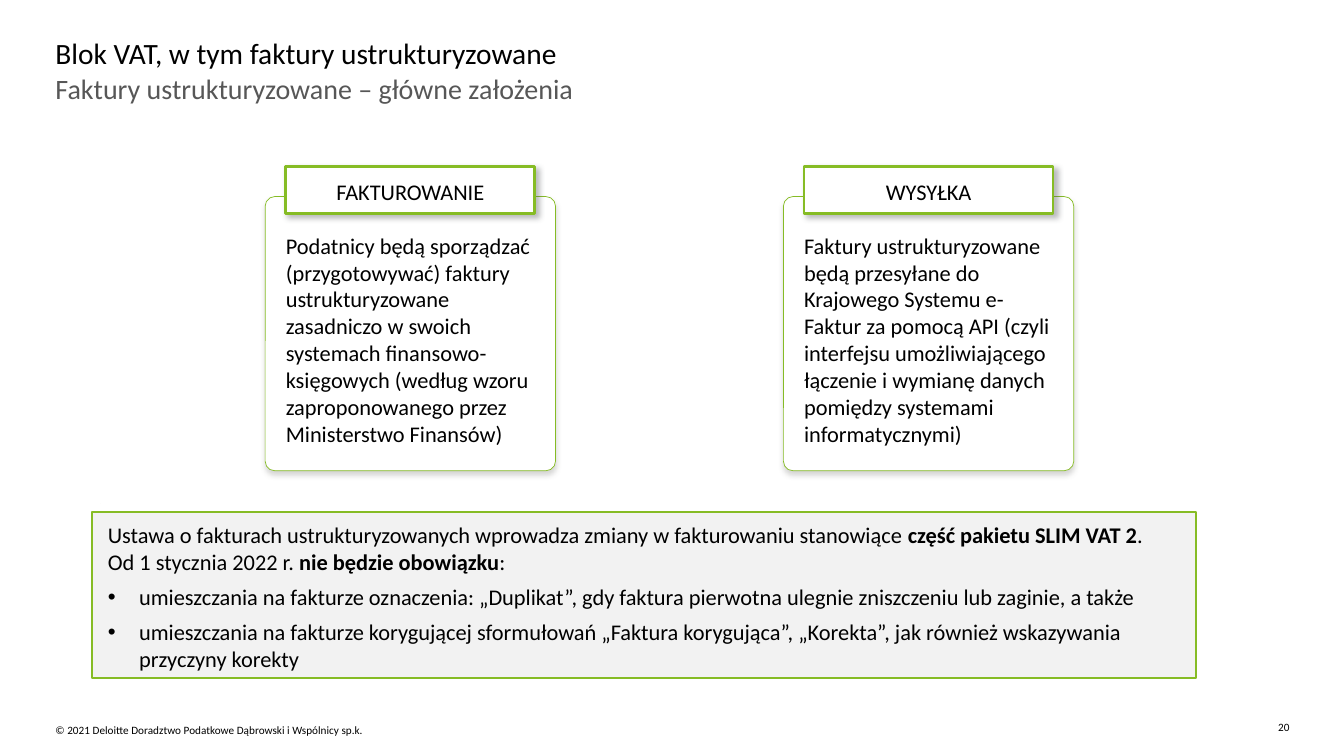
from math import cos, pi, sin

from lxml import etree
from pptx import Presentation
from pptx import util as u
from pptx.dml.color import RGBColor
from pptx.enum import shapes, text
from pptx.oxml.ns import qn

TITLE = "Blok VAT, w tym faktury ustrukturyzowane"
SUBTITLE = "Faktury ustrukturyzowane – główne założenia"
CARDS = [
    (2.63, "FAKTUROWANIE",
     "Podatnicy będą sporządzać (przygotowywać) faktury ustrukturyzowane "
     "zasadniczo w swoich systemach finansowo-księgowych (według wzoru "
     "zaproponowanego przez Ministerstwo Finansów)"),
    (7.77, "WYSYŁKA",
     "Faktury ustrukturyzowane będą przesyłane do Krajowego Systemu e-Faktur "
     "za pomocą API (czyli interfejsu umożliwiającego łączenie i wymianę "
     "danych pomiędzy systemami informatycznymi)"),
]
NOTE_INTRO = [
    ("Ustawa o fakturach ustrukturyzowanych wprowadza zmiany w fakturowaniu stanowiące ", False),
    ("część pakietu SLIM VAT 2", True),
    (". Od 1 stycznia 2022 r. ", False),
    ("nie będzie obowiązku", True),
    (":", False),
]
NOTE_BULLETS = [
    "umieszczania na fakturze oznaczenia: „Duplikat”, gdy faktura pierwotna "
    "ulegnie zniszczeniu lub zaginie, a także",
    "umieszczania na fakturze korygującej sformułowań „Faktura korygująca”, "
    "„Korekta”, jak również wskazywania przyczyny korekty",
]
COPYRIGHT = "© 2021 Deloitte Doradztwo Podatkowe Dąbrowski i Wspólnicy sp.k."
PAGE_NUMBER = "20"

COLORS = {"green": "86BC25", "white": "FFFFFF", "pale": "F2F2F2", "black": "000000",
          "grey": "575757", "card_shadow": "6A6A65", "header_shadow": "53565A"}
FONT = "Calibri"
INDENT = 0.31
ICON_CENTER, ICON_RADIUS = (0.77, 5.02), 0.265
PAGE_FRAME = [(0.65, 4.85), (0.81, 4.85), (0.89, 4.93), (0.89, 5.18), (0.65, 5.18)]
PAGE_INSIDE = [(0.67, 4.88), (0.79, 4.88), (0.79, 4.95), (0.87, 4.95), (0.87, 5.16), (0.67, 5.16)]
PAGE_FOLD = [(0.81, 4.89), (0.85, 4.93), (0.81, 4.93)]
PAGE_LINES = [4.98, 5.03, 5.07, 5.12]


def rgb(name):
    return RGBColor.from_string(COLORS[name])


def inches(*values):
    return [u.Inches(v) for v in values]


def set_frame(tf, inset=0):
    margin = u.Inches(inset)
    values = {"margin_left": margin, "margin_top": margin, "margin_right": margin,
              "margin_bottom": margin, "word_wrap": True,
              "auto_size": text.MSO_AUTO_SIZE.NONE,
              "vertical_anchor": text.MSO_ANCHOR.TOP}
    for key, value in values.items():
        setattr(tf, key, value)


def write(p, runs, size, color="black", align="LEFT", before=0, after=0, bullet=False):
    pPr = p._p.get_or_add_pPr()
    indent = u.Inches(INDENT) if bullet else 0
    pPr.set("marL", str(indent))
    pPr.set("indent", str(-indent))
    if bullet:
        etree.SubElement(pPr, qn("a:buFont")).set("typeface", "Arial")
        etree.SubElement(pPr, qn("a:buChar")).set("char", "•")
    else:
        etree.SubElement(pPr, qn("a:buNone"))
    layout = {"alignment": text.PP_ALIGN[align], "line_spacing": 1.0,
              "space_before": u.Pt(before), "space_after": u.Pt(after)}
    for key, value in layout.items():
        setattr(p, key, value)
    for words, bold in runs:
        r = p.add_run()
        r.text = words
        for key, value in {"name": FONT, "size": u.Pt(size), "bold": bold}.items():
            setattr(r.font, key, value)
        r.font.color.rgb = rgb(color)


def write_box(sp, words, size, inset=0, **style):
    set_frame(sp.text_frame, inset)
    write(sp.text_frame.paragraphs[0], [(words, False)], size, **style)


def add_text(s, box, words, size, **style):
    write_box(s.shapes.add_textbox(*inches(*box)), words, size, **style)


def fill_placeholder(sp, box, words, size, **style):
    sp.left, sp.top, sp.width, sp.height = inches(*box)
    write_box(sp, words, size, **style)


def paint(sp, fill, line_width=None):
    sp.shadow.inherit = False
    sp.fill.solid()
    sp.fill.fore_color.rgb = rgb(fill)
    if line_width:
        sp.line.color.rgb = rgb("green")
        sp.line.width = u.Pt(line_width)
    else:
        sp.line.fill.background()


def add_panel(s, kind, box, fill, line_width):
    sp = s.shapes.add_shape(shapes.MSO_SHAPE[kind], *inches(*box))
    paint(sp, fill, line_width)
    return sp


def add_shadow(sp, color, alpha, angle):
    effects = sp._element.spPr.find(qn("a:effectLst"))
    shadow = etree.SubElement(effects, qn("a:outerShdw"), blurRad=str(u.Pt(4)),
                              dist=str(u.Pt(3)), dir=str(angle * 60000), rotWithShape="0")
    tint = etree.SubElement(shadow, qn("a:srgbClr"), val=COLORS[color])
    etree.SubElement(tint, qn("a:alpha"), val=str(alpha * 1000))


def add_icon(s):
    cx, cy = ICON_CENTER
    steps = 72
    circle = [(cx + ICON_RADIUS * cos(2 * pi * i / steps),
               cy + ICON_RADIUS * sin(2 * pi * i / steps)) for i in range(steps)]
    bars = [[(0.69, y), (0.85, y), (0.85, y + 0.02), (0.69, y + 0.02)] for y in PAGE_LINES]
    outlines = [circle, PAGE_FRAME, PAGE_INSIDE, PAGE_FOLD] + bars
    builder = s.shapes.build_freeform(*circle[0], scale=u.Inches(1))
    for outline in outlines:
        if outline is not circle:
            builder.move_to(*outline[0])
        builder.add_line_segments(outline[1:], close=True)
    paint(builder.convert_to_shape(), "green")


def add_note(s):
    add_panel(s, "RECTANGLE", (0.91, 5.08, 10.95, 1.65), "pale", 1.5)
    tf = s.shapes.add_textbox(*inches(1.07, 5.17, 10.41, 1.51)).text_frame
    set_frame(tf)
    write(tf.paragraphs[0], NOTE_INTRO, 16)
    for item in NOTE_BULLETS:
        write(tf.add_paragraph(), [(item, False)], 16, before=6, bullet=True)


def add_card(s, left, heading, body):
    card = add_panel(s, "ROUNDED_RECTANGLE", (left, 1.95, 2.88, 2.72), "white", 0.5)
    card.adjustments[0] = 0.035
    add_shadow(card, "card_shadow", 27, 90)
    inner = left + 0.205
    add_text(s, (inner, 2.3, 2.47, 2.87), body, 16, after=10)
    header = add_panel(s, "RECTANGLE", (inner, 1.65, 2.47, 0.47), "white", 2)
    add_shadow(header, "header_shadow", 40, 45)
    write_box(header, heading, 16, inset=0.12, align="CENTER", after=6)


def main():
    prs = Presentation()
    prs.slide_width, prs.slide_height = inches(13.33, 7.5)
    s = prs.slides.add_slide(prs.slide_layouts[1])
    fill_placeholder(s.shapes.title, (0.55, 0.35, 12.24, 0.37), TITLE, 21)
    fill_placeholder(s.placeholders[1], (0.55, 0.71, 12.24, 0.83), SUBTITLE, 20,
                     color="grey", after=10)
    for card in CARDS:
        add_card(s, *card)
    add_note(s)
    add_icon(s)
    add_text(s, (0.55, 7.18, 5.86, 0.22), COPYRIGHT, 8)
    add_text(s, (12.45, 7.15, 0.34, 0.13), PAGE_NUMBER, 8, align="RIGHT")
    prs.save("out.pptx")


if __name__ == "__main__":
    main()
